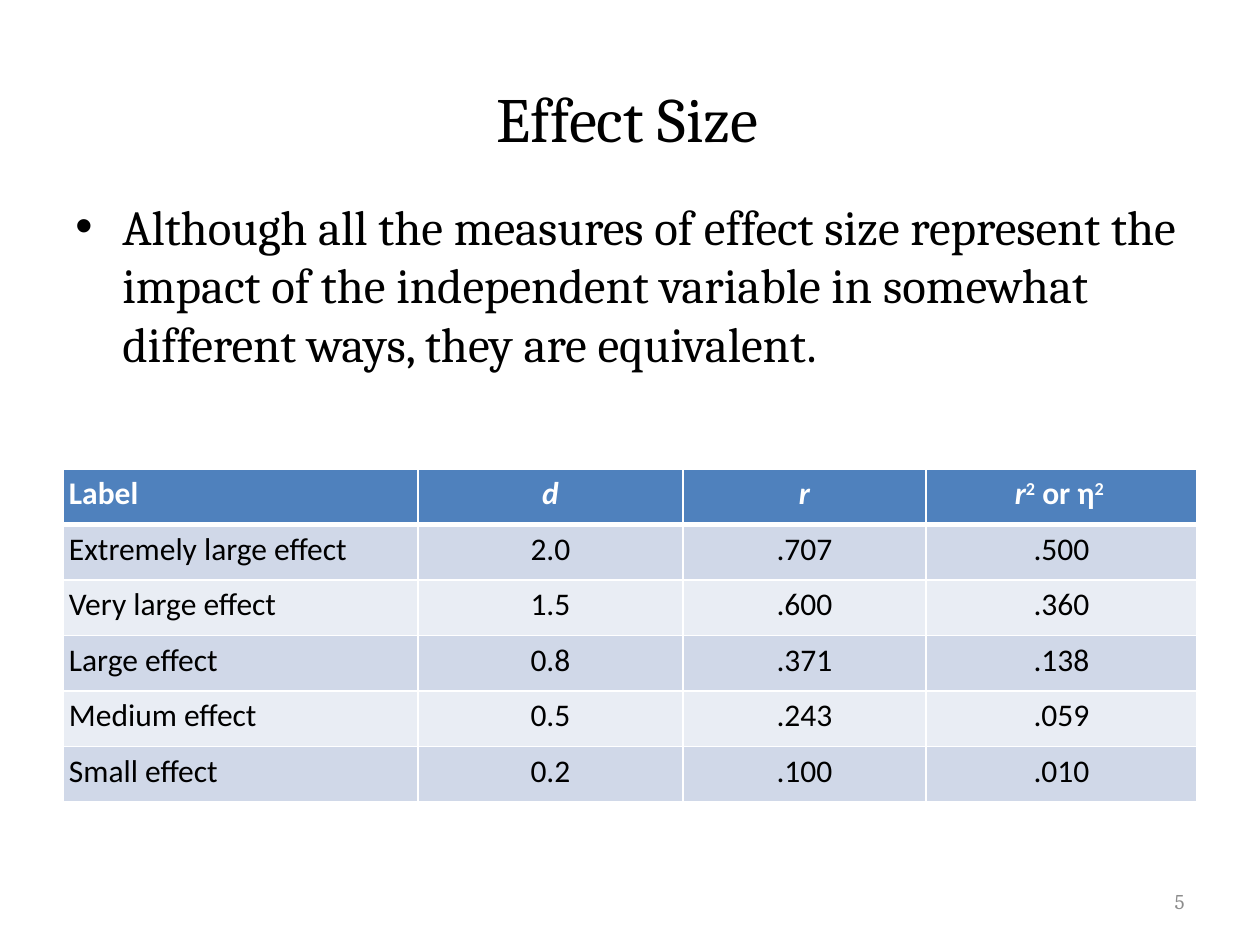
from lxml import etree
from pptx import Presentation
from pptx import util as u
from pptx.dml.color import RGBColor
from pptx.enum import text
from pptx.oxml.ns import qn

# Content: a cell is a list of (text, format) runs or a plain string
TITLE = "Effect Size"
POINT = ("Although all the measures of effect size represent the impact of the "
         "independent variable in somewhat different ways, they are equivalent.")
PAGE = "5"
ITALIC, SUPER = {"italic": True}, {"raised": 30}
HEADER = ["Label", [("d", ITALIC)], [("r", ITALIC)],
          [("r", ITALIC), ("2", SUPER), (" or η", {}), ("2 ", SUPER)]]
EFFECTS = [
    ["Extremely large effect", "2.0", ".707", ".500"],
    ["Very large effect", "1.5", ".600", ".360"],
    ["Large effect", "0.8", ".371", ".138"],
    ["Medium effect", "0.5", ".243", ".059"],
    ["Small effect", "0.2", ".100", ".010"],
]

BLACK = RGBColor(0x00, 0x00, 0x00)
WHITE = RGBColor(0xFF, 0xFF, 0xFF)
GREY = RGBColor(0x8C, 0x8C, 0x8C)
BLUE = RGBColor(0x4F, 0x81, 0xBD)
BANDS = [RGBColor(0xD0, 0xD8, 0xE8), RGBColor(0xE9, 0xED, 0xF4)]

# Layout in px
LEFT, WIDTH = 63, 1134
TITLE_TOP, TITLE_HEIGHT = 38, 158
POINT_TOP, POINT_HEIGHT, INDENT = 190, 278, 47
TABLE_TOP, TABLE_HEIGHT, CELL_INSET = 469, 333, 6
COLUMNS = [355, 265, 243, 271]
PAGE_BOX = (903, 876, 294, 50)


def px(n):
    return u.Emu(round(n * 914400 / 126))


def write(frame, content, size, font="Cambria", color=BLACK, bold=False,
          align=text.PP_ALIGN.LEFT, anchor=text.MSO_ANCHOR.TOP):
    frame.word_wrap = True
    frame.vertical_anchor = anchor
    paragraph = frame.paragraphs[0]
    paragraph.alignment = align
    runs = [(content, {})] if isinstance(content, str) else content
    for words, style in runs:
        run = paragraph.add_run()
        run.text = words
        run.font.size, run.font.name = u.Pt(size), font
        run.font.bold, run.font.italic = bold, style.get("italic", False)
        run.font.color.rgb = color
        if "raised" in style:
            run.font._element.set("baseline", str(style["raised"] * 1000))
    return paragraph


def add_bullet(paragraph, indent):
    props = paragraph._p.get_or_add_pPr()
    props.set("marL", str(indent))
    props.set("indent", str(-indent))
    etree.SubElement(props, qn("a:buFont"), typeface="Arial")
    etree.SubElement(props, qn("a:buChar"), char="•")


def set_borders(cell, bottom):
    props = cell._tc.get_or_add_tcPr()
    widths = {"lnL": 1, "lnR": 1, "lnT": 1, "lnB": bottom}
    for place, (side, width) in enumerate(widths.items()):
        line = etree.Element(qn("a:" + side), w=str(u.Pt(width)))
        fill = etree.SubElement(line, qn("a:solidFill"))
        etree.SubElement(fill, qn("a:srgbClr"), val=str(WHITE))
        props.insert(place, line)


def main():
    deck = Presentation()
    deck.slide_width, deck.slide_height = u.Inches(10), u.Inches(7.5)
    slide = deck.slides.add_slide(deck.slide_layouts[5])

    # Title
    title = slide.shapes.title
    title.left, title.top = px(LEFT), px(TITLE_TOP)
    title.width, title.height = px(WIDTH), px(TITLE_HEIGHT)
    title.text_frame.margin_right = u.Inches(0.14)
    write(title.text_frame, TITLE, 36, align=text.PP_ALIGN.CENTER,
          anchor=text.MSO_ANCHOR.MIDDLE)

    # Effect size table
    rows = [HEADER] + EFFECTS
    table = slide.shapes.add_table(
        len(rows), len(COLUMNS), px(LEFT), px(TABLE_TOP),
        px(WIDTH), px(TABLE_HEIGHT)).table
    for column, width in zip(table.columns, COLUMNS):
        column.width = px(width)
    for r, row in enumerate(rows):
        head = r == 0
        for c, content in enumerate(row):
            cell = table.cell(r, c)
            cell.margin_left = cell.margin_right = px(CELL_INSET)
            cell.margin_top = cell.margin_bottom = px(CELL_INSET)
            cell.fill.solid()
            cell.fill.fore_color.rgb = BLUE if head else BANDS[(r - 1) % 2]
            set_borders(cell, bottom=3 if head else 1)
            write(cell.text_frame, content, 18, font="Calibri", bold=head,
                  color=WHITE if head else BLACK,
                  align=text.PP_ALIGN.CENTER if c else text.PP_ALIGN.LEFT)

    # Bullet point
    point = slide.shapes.add_textbox(px(LEFT), px(POINT_TOP), px(WIDTH), px(POINT_HEIGHT))
    paragraph = write(point.text_frame, POINT, 28)
    paragraph.space_before = u.Pt(5.6)
    add_bullet(paragraph, px(INDENT))

    # Page number
    page = slide.shapes.add_textbox(*map(px, PAGE_BOX))
    write(page.text_frame, PAGE, 12, color=GREY, align=text.PP_ALIGN.RIGHT,
          anchor=text.MSO_ANCHOR.MIDDLE)

    deck.save("out.pptx")


if __name__ == "__main__":
    main()
